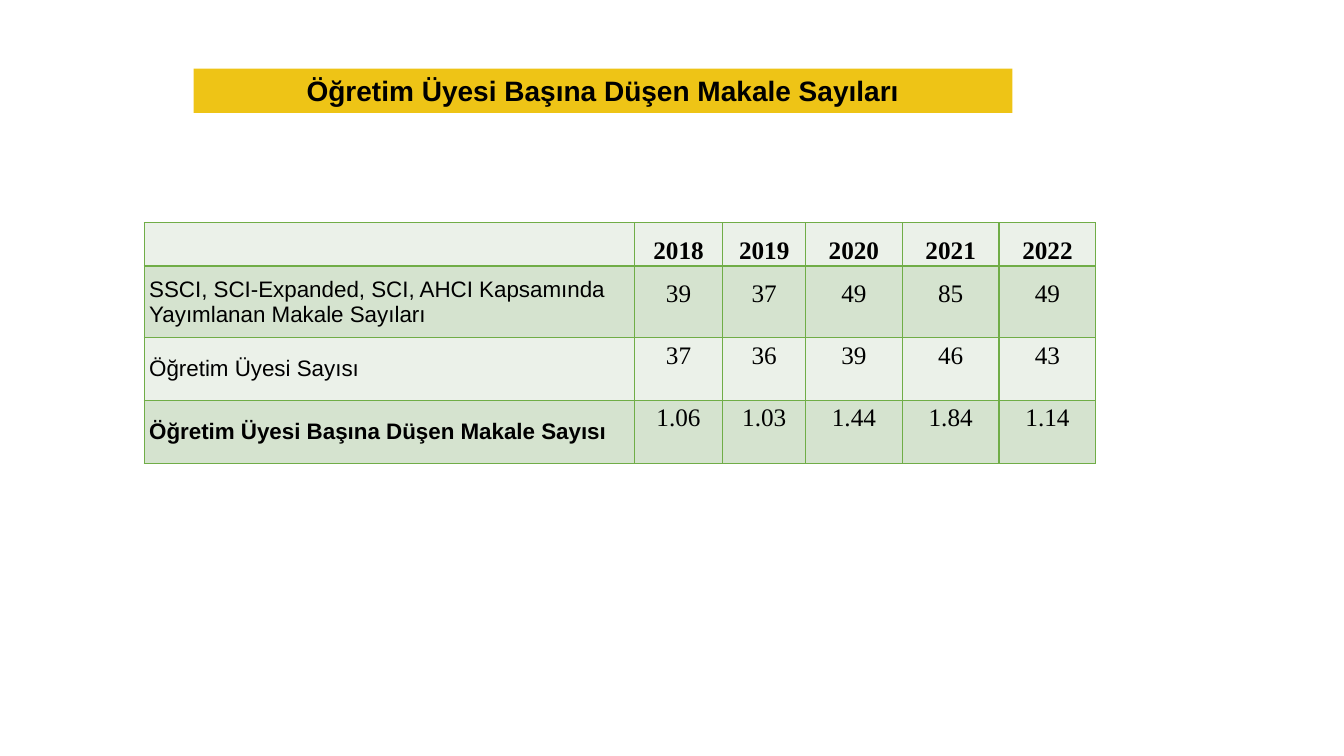
from dataclasses import dataclass

from lxml import etree
from pptx import Presentation
from pptx import util as u
from pptx.dml.color import RGBColor
from pptx.enum import text
from pptx.oxml.ns import qn


@dataclass(frozen=True)
class Theme:
    ink: str = "000000"
    banner: str = "EEC416"
    border: str = "70AD47"
    bands: tuple = ("EBF1E9", "D5E3CF")
    label_font: str = "Arial"
    number_font: str = "Times New Roman"
    title_size: int = 20
    label_size: int = 16
    number_size: int = 18


T = Theme()
WIDTH, HEIGHT = 13.33, 7.5
TITLE = "Öğretim Üyesi Başına Düşen Makale Sayıları"
COLUMNS = (4.86, 0.88, 0.82, 0.96, 0.96, 0.96)
ROW_HEIGHTS = (0.43, 0.71, 0.62, 0.63)
LINE_SPACING = (1.5, 1.5, 1.15, 1.15)
ROWS = (
    ("", "2018", "2019", "2020", "2021", "2022"),
    ("SSCI, SCI-Expanded, SCI, AHCI Kapsamında Yayımlanan Makale Sayıları",
     "39", "37", "49", "85", "49"),
    ("Öğretim Üyesi Sayısı", "37", "36", "39", "46", "43"),
    ("Öğretim Üyesi Başına Düşen Makale Sayısı",
     "1.06", "1.03", "1.44", "1.84", "1.14"),
)


def apply(obj, **values):
    for name, value in values.items():
        setattr(obj, name, value)


def fill(obj, color):
    obj.fill.solid()
    obj.fill.fore_color.rgb = RGBColor.from_string(color)


def write(p, content, font, size, bold):
    r = p.add_run()
    r.text = content
    apply(r.font, name=font, size=u.Pt(size), bold=bold)
    r.font.color.rgb = RGBColor.from_string(T.ink)


def add_borders(cell):
    """Draw all four sides; call before filling, as the schema puts lines first."""
    tc_pr = cell._tc.get_or_add_tcPr()
    for side in ("lnL", "lnR", "lnT", "lnB"):
        ln = etree.SubElement(tc_pr, qn(f"a:{side}"), w=str(u.Pt(1)))
        solid = etree.SubElement(ln, qn("a:solidFill"))
        etree.SubElement(solid, qn("a:srgbClr"), val=T.border)


def title_banner(s, left, top, width, height):
    sp = s.shapes.title
    apply(sp, left=left, top=top, width=width, height=height)
    fill(sp, T.banner)
    tf = sp.text_frame
    apply(tf, word_wrap=True, auto_size=text.MSO_AUTO_SIZE.NONE,
          vertical_anchor=text.MSO_ANCHOR.MIDDLE)
    p = tf.paragraphs[0]
    p.alignment = text.PP_ALIGN.CENTER
    write(p, TITLE, T.label_font, T.title_size, True)


def format_label(cell, content, bold):
    side = u.Inches(0.05)
    apply(cell, margin_left=side, margin_right=side, margin_top=0, margin_bottom=0,
          vertical_anchor=text.MSO_ANCHOR.MIDDLE)
    if content:
        write(cell.text_frame.paragraphs[0], content, T.label_font, T.label_size, bold)


def format_number(cell, content, bold, spacing):
    side = u.Inches(0.07)
    apply(cell, margin_left=side, margin_right=side, margin_top=0, margin_bottom=0,
          vertical_anchor=text.MSO_ANCHOR.TOP)
    p = cell.text_frame.paragraphs[0]
    apply(p, alignment=text.PP_ALIGN.CENTER, line_spacing=spacing)
    write(p, content, T.number_font, T.number_size, bold)


def article_table(s, left, top, width, height):
    """Share the box among columns and rows in proportion to their sizes."""
    table = s.shapes.add_table(len(ROWS), len(COLUMNS), left, top, width, height).table
    apply(table, first_row=False, horz_banding=False)
    for column, share in zip(table.columns, COLUMNS):
        column.width = int(width * share / sum(COLUMNS))
    for row, share in zip(table.rows, ROW_HEIGHTS):
        row.height = int(height * share / sum(ROW_HEIGHTS))
    for i, (values, spacing) in enumerate(zip(ROWS, LINE_SPACING)):
        for j, value in enumerate(values):
            cell = table.cell(i, j)
            add_borders(cell)
            fill(cell, T.bands[i % 2])
            if j == 0:
                format_label(cell, value, bold=i == len(ROWS) - 1)
            else:
                format_number(cell, value, bold=i == 0, spacing=spacing)


def main():
    prs = Presentation()
    apply(prs, slide_width=u.Inches(WIDTH), slide_height=u.Inches(HEIGHT))
    s = prs.slides.add_slide(prs.slide_layouts.get_by_name("Title Only"))
    title_banner(s, *map(u.Inches, (1.92, 0.68, 8.12, 0.44)))
    article_table(s, *map(u.Inches, (1.43, 2.21, sum(COLUMNS), sum(ROW_HEIGHTS))))
    prs.save("out.pptx")


if __name__ == "__main__":
    main()
